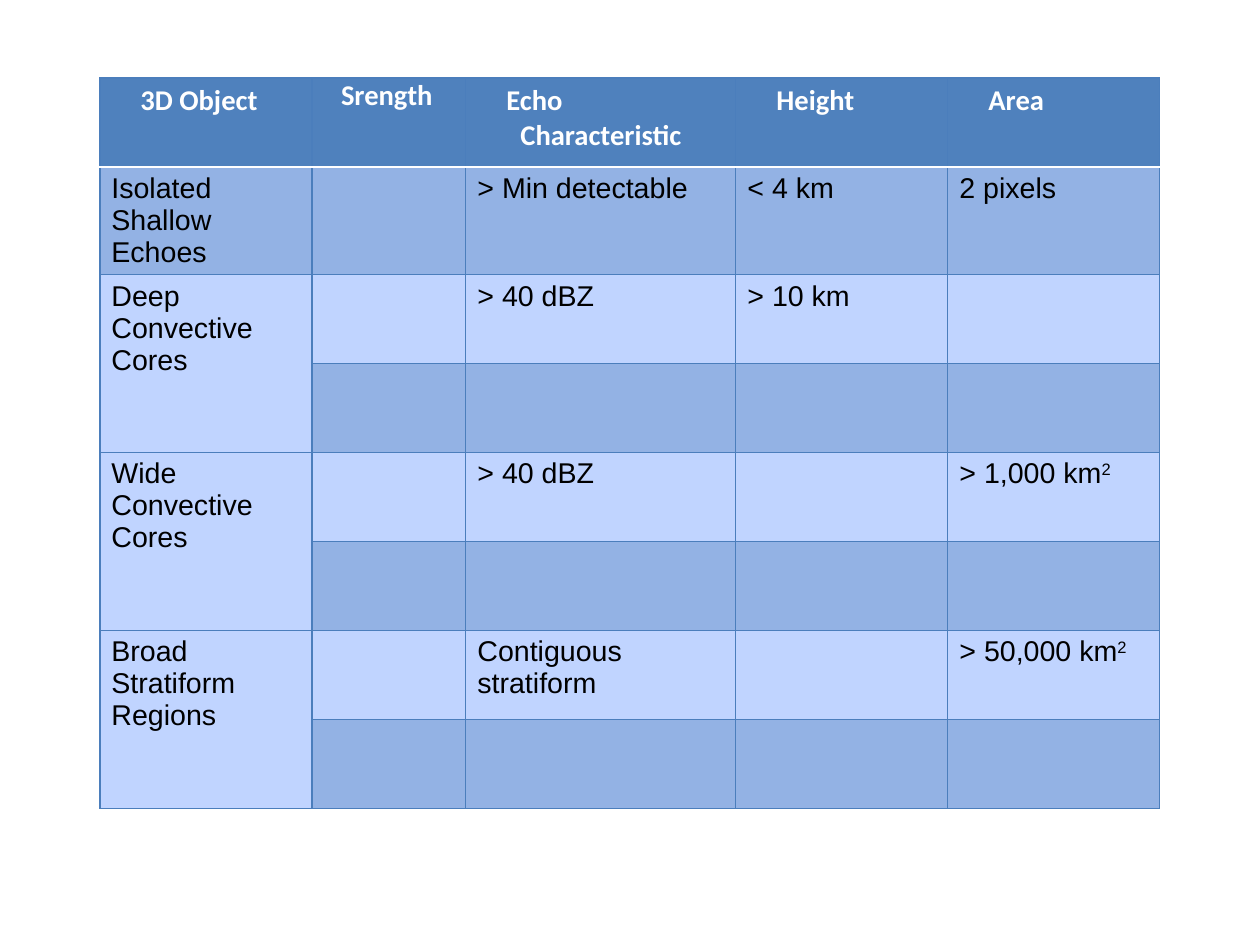
from pptx import Presentation
from pptx.dml.color import RGBColor
from pptx.oxml import parse_xml
from pptx.oxml.ns import nsdecls
from pptx.util import Pt

EMU_PER_PX = 8000
COLORS = {
    "header": "4F81BD",
    "band": "93B2E4",
    "plain": "C0D4FF",
    "grid": "4B7EBC",
    "white": "FFFFFF",
    "black": "000000",
}
COLUMN_WIDTHS = [212, 154, 270, 212, 212]
ROW_HEIGHT = 89
TABLE_BOX = (100, 78, sum(COLUMN_WIDTHS), 8 * ROW_HEIGHT)
HEADINGS = ["3D Object", "Srength", "Echo Characteristic", "Height", "Area"]
BODY_ROWS = [
    ["Isolated Shallow Echoes", "", "> Min detectable", "< 4 km", "2 pixels"],
    ["Deep Convective Cores", "", "> 40 dBZ", "> 10 km", ""],
    [""] * 5,
    ["Wide Convective Cores", "", "> 40 dBZ", "", "> 1,000 km^2"],
    [""] * 5,
    ["Broad Stratiform Regions", "", "Contiguous\nstratiform", "", "> 50,000 km^2"],
    [""] * 5,
]


def px(length):
    """Turn a length in px into EMU."""
    return length * EMU_PER_PX


def set_borders(cell, row):
    """Draw the grid lines of a cell, with a white rule below the header."""
    properties = cell._tc.get_or_add_tcPr()
    white_side = {0: "B", 1: "T"}.get(row)
    for side in "LRTB":
        color, width = ("white", 2) if side == white_side else ("grid", 0.75)
        properties.append(parse_xml(
            f'<a:ln{side} {nsdecls("a")} w="{Pt(width)}"><a:solidFill>'
            f'<a:srgbClr val="{COLORS[color]}"/></a:solidFill></a:ln{side}>'))


def add_text_run(paragraph, text, font_name, color, bold):
    """Add one formatted run and return it."""
    run = paragraph.add_run()
    run.text = text
    run.font.name = font_name
    run.font.size = Pt(18)
    run.font.bold = bold
    run.font.color.rgb = RGBColor.from_string(COLORS[color])
    return run


def write_cell(cell, text, is_header):
    """Write the text of a cell; ^ starts a superscript."""
    paragraph = cell.text_frame.paragraphs[0]
    paragraph.font.size = Pt(18)
    style = ("Calibri", "white", True) if is_header else ("Arial", "black", False)
    if is_header:
        indents = paragraph._p.get_or_add_pPr()
        indents.set("marL", str(px(43)))
        indents.set("indent", str(px(-14)))
    if not text:
        return
    for number, line in enumerate(text.split("\n")):
        if number:
            paragraph.add_line_break()
        base, _, superscript = line.partition("^")
        add_text_run(paragraph, base, *style)
        if superscript:
            run = add_text_run(paragraph, superscript, *style)
            run._r.get_or_add_rPr().set("baseline", "30000")


def add_echo_table(slide, box):
    """Place the table of radar echo objects in the given box."""
    rows = [HEADINGS] + BODY_ROWS
    table = slide.shapes.add_table(len(rows), len(HEADINGS), *map(px, box)).table
    table.horz_banding = False
    for column, width in zip(table.columns, COLUMN_WIDTHS):
        column.width = px(width)
    for row_index, texts in enumerate(rows):
        table.rows[row_index].height = px(ROW_HEIGHT)
        fill = "header" if row_index == 0 else "band" if row_index % 2 else "plain"
        for column_index, text in enumerate(texts):
            cell = table.cell(row_index, column_index)
            set_borders(cell, row_index)
            cell.fill.solid()
            cell.fill.fore_color.rgb = RGBColor.from_string(COLORS[fill])
            write_cell(cell, text, row_index == 0)
    strength = table.cell(0, 1)
    strength.margin_left = strength.margin_right = 0
    strength.margin_top = strength.margin_bottom = 0
    for top in range(2, len(rows), 2):
        table.cell(top, 0).merge(table.cell(top + 1, 0))


def main():
    """Build the slide and save it."""
    presentation = Presentation()
    presentation.slide_width = px(1260)
    presentation.slide_height = px(945)
    slide = presentation.slides.add_slide(presentation.slide_layouts[6])
    add_echo_table(slide, TABLE_BOX)
    presentation.save("out.pptx")


if __name__ == "__main__":
    main()
